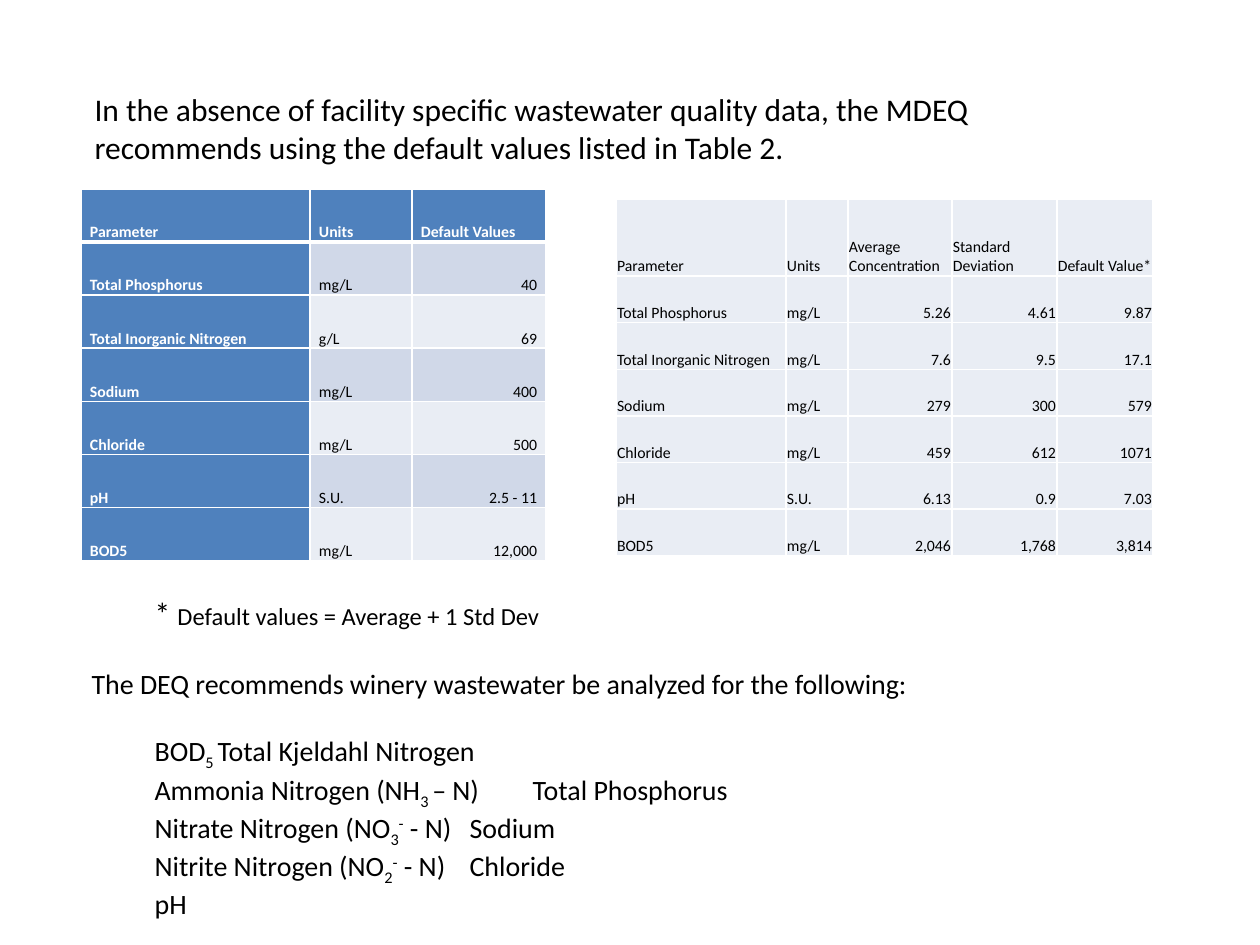
import pptx
import pptx.dml.color
import pptx.enum.text
import pptx.oxml.ns
import pptx.util
from lxml import etree

EMU_PER_PX = 914400 / 126
BLACK = pptx.dml.color.RGBColor(0x00, 0x00, 0x00)
WHITE = pptx.dml.color.RGBColor(0xFF, 0xFF, 0xFF)
BLUE = pptx.dml.color.RGBColor(0x4F, 0x81, 0xBD)
BAND_DARK = pptx.dml.color.RGBColor(0xD0, 0xD8, 0xE8)
BAND_LIGHT = pptx.dml.color.RGBColor(0xE9, 0xED, 0xF4)
LEFT = pptx.enum.text.PP_ALIGN.LEFT
RIGHT = pptx.enum.text.PP_ALIGN.RIGHT
TOP = pptx.enum.text.MSO_ANCHOR.TOP
BOTTOM = pptx.enum.text.MSO_ANCHOR.BOTTOM
SUB, SUPER = -25000, 30000

INTRO = ("In the absence of facility specific wastewater quality data, the MDEQ "
         "recommends using the default values listed in Table 2.")
DEFAULT_VALUES = [
    ("Parameter", "Units", "Default Values"),
    ("Total Phosphorus", "mg/L", "40"),
    ("Total Inorganic Nitrogen", "g/L", "69"),
    ("Sodium", "mg/L", "400"),
    ("Chloride", "mg/L", "500"),
    ("pH", "S.U.", "2.5 - 11"),
    ("BOD5", "mg/L", "12,000"),
]
MEASURED_VALUES = [
    ("Parameter", "Units", "Average Concentration", "Standard Deviation", "Default Value*"),
    ("Total Phosphorus", "mg/L", "5.26", "4.61", "9.87"),
    ("Total Inorganic Nitrogen", "mg/L", "7.6", "9.5", "17.1"),
    ("Sodium", "mg/L", "279", "300", "579"),
    ("Chloride", "mg/L", "459", "612", "1071"),
    ("pH", "S.U.", "6.13", "0.9", "7.03"),
    ("BOD5", "mg/L", "2,046", "1,768", "3,814"),
]
ANALYTES = [
    [("\tBOD", 0), ("5", SUB), ("\tTotal Kjeldahl Nitrogen", 0)],
    [("\tAmmonia Nitrogen (NH", 0), ("3 ", SUB), ("– N)\tTotal Phosphorus", 0)],
    [("\tNitrate Nitrogen (NO", 0), ("3", SUB), ("-", SUPER), (" - N)\tSodium", 0)],
    [("\tNitrite Nitrogen (NO", 0), ("2", SUB), ("-", SUPER), (" - N)\tChloride", 0)],
    [("\tpH", 0)],
]


def px(length):
    return pptx.util.Emu(round(length * EMU_PER_PX))


def write(paragraph, text, *, size, color=BLACK, bold=False, baseline=0, align=LEFT):
    paragraph.alignment = align
    run = paragraph.add_run()
    run.text = text
    run.font.name = "Calibri"
    run.font.size = pptx.util.Pt(size)
    run.font.color.rgb = color
    run.font.bold = bold
    if baseline:
        run.font._element.set("baseline", str(baseline))


def place(shape, box):
    shape.left, shape.top, shape.width, shape.height = map(px, box)
    frame = shape.text_frame
    frame.word_wrap = True
    frame.vertical_anchor = TOP
    frame.auto_size = pptx.enum.text.MSO_AUTO_SIZE.SHAPE_TO_FIT_TEXT
    return frame


def set_plain_layout(paragraph, tab_stops, space_before):
    """Remove the bullet and hanging indent, and set the tab stops."""
    paragraph.space_before = pptx.util.Pt(space_before)
    properties = paragraph._p.get_or_add_pPr()
    properties.set("marL", "0")
    properties.set("indent", "0")
    etree.SubElement(properties, pptx.oxml.ns.qn("a:buNone"))
    tabs = etree.SubElement(properties, pptx.oxml.ns.qn("a:tabLst"))
    for stop in tab_stops:
        etree.SubElement(tabs, pptx.oxml.ns.qn("a:tab"), pos=str(px(stop)), algn="l")


def set_borders(cell, **widths):
    properties = cell._tc.get_or_add_tcPr()
    for side in "LRTB":
        width = pptx.util.Pt(widths.get(side, 1))
        line = etree.SubElement(properties, pptx.oxml.ns.qn(f"a:ln{side}"), w=str(width))
        fill = etree.SubElement(line, pptx.oxml.ns.qn("a:solidFill"))
        etree.SubElement(fill, pptx.oxml.ns.qn("a:srgbClr"), val=str(WHITE))


def add_value_table(slide, box, rows, column_widths, header_height, margins,
                    accented=False, line_spacing=1.0):
    """Add a table; an accented one has a blue header row and first column."""
    shape = slide.shapes.add_table(len(rows), len(column_widths), *map(px, box))
    table = shape.table
    for column, width in zip(table.columns, column_widths):
        column.width = px(width)
    body_height = (box[3] - header_height) / (len(rows) - 1)
    for r, values in enumerate(rows):
        table.rows[r].height = px(body_height if r else header_height)
        for c, value in enumerate(values):
            cell = table.cell(r, c)
            blue = accented and (r == 0 or c == 0)
            rule = 3 if accented else 1
            set_borders(cell, B=rule if r == 0 else 1, T=rule if r == 1 else 1)
            cell.fill.solid()
            band = BAND_DARK if accented and r % 2 else BAND_LIGHT
            cell.fill.fore_color.rgb = BLUE if blue else band
            cell.vertical_anchor = BOTTOM
            side, top = margins
            cell.margin_left = cell.margin_right = px(side)
            cell.margin_top, cell.margin_bottom = px(top), 0
            paragraph = cell.text_frame.paragraphs[0]
            paragraph.line_spacing = line_spacing
            write(paragraph, value, size=9, color=WHITE if blue else BLACK, bold=blue,
                  align=RIGHT if r and c > 1 else LEFT)


def fill_intro(shape, box):
    write(place(shape, box).paragraphs[0], INTRO, size=18)


def fill_analysis(shape, box):
    """Write the table note, then the two columns of recommended analytes."""
    frame = place(shape, box)
    list_column, right_column = 126, 630
    gap = 19.5

    note = frame.paragraphs[0]
    set_plain_layout(note, [right_column], 0)
    write(note, "\t* ", size=18)
    write(note, "Default values = Average + 1 Std Dev", size=14)

    heading = frame.add_paragraph()
    set_plain_layout(heading, [], gap)
    write(heading, "The DEQ recommends winery wastewater be analyzed for the following:", size=16)

    for index, parts in enumerate(ANALYTES):
        paragraph = frame.add_paragraph()
        set_plain_layout(paragraph, [list_column, right_column], 0 if index else gap)
        for text, baseline in parts:
            write(paragraph, text, size=16, baseline=baseline)


def main():
    presentation = pptx.Presentation()
    presentation.slide_width, presentation.slide_height = px(1260), px(945)
    slide = presentation.slides.add_slide(presentation.slide_layouts[1])
    fill_intro(slide.shapes.title, (82, 84, 1061, 89))
    add_value_table(slide, (81, 189, 465, 372), DEFAULT_VALUES, [229, 102, 134],
                    header_height=53, margins=(9, 0), accented=True, line_spacing=1.15)
    fill_analysis(slide.placeholders[1], (79, 588, 1081, 323))
    add_value_table(slide, (616, 199, 537, 357), MEASURED_VALUES, [170, 62, 104, 105, 96],
                    header_height=77, margins=(1, 1))
    presentation.save("out.pptx")


if __name__ == "__main__":
    main()
